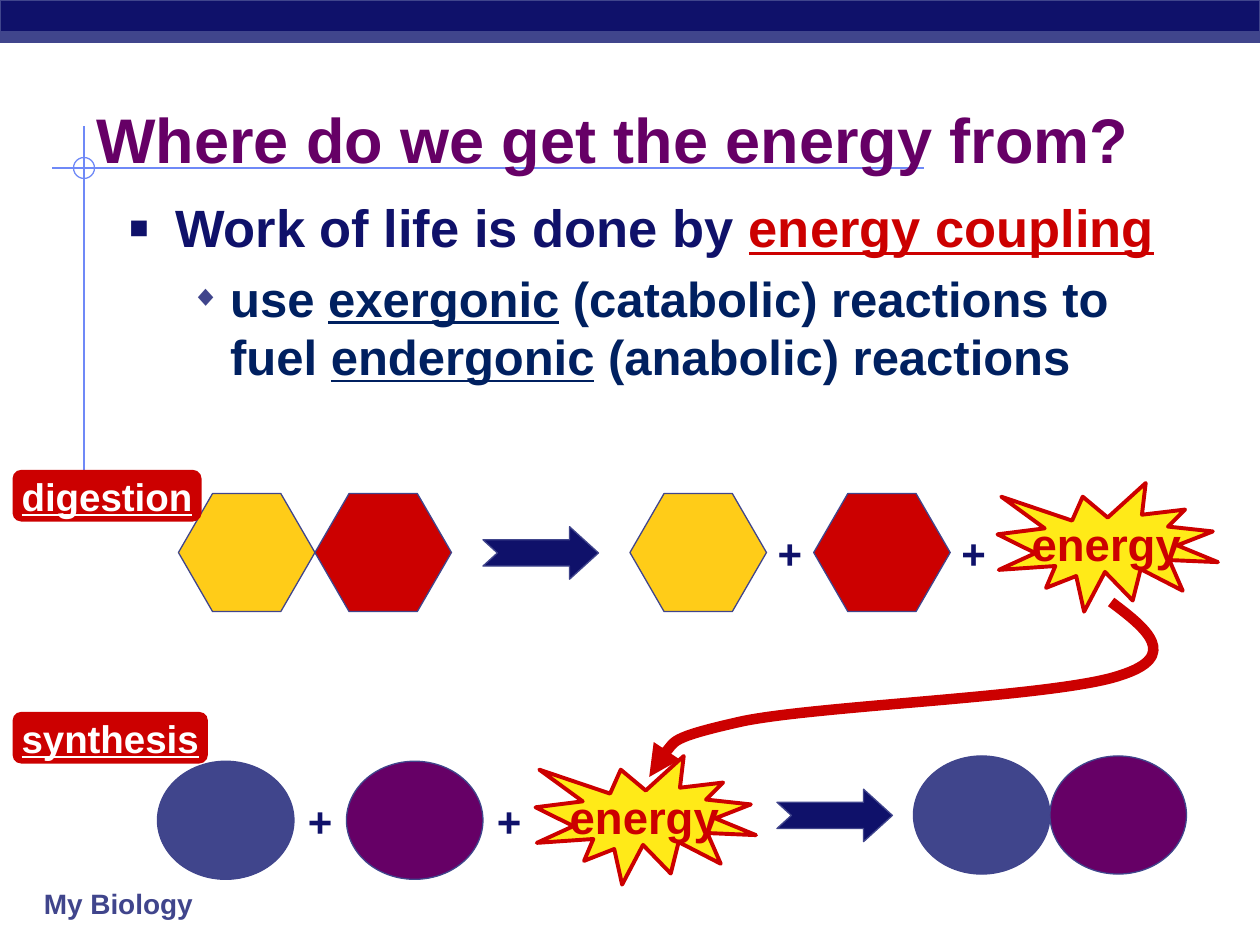
from lxml import etree
from pptx import Presentation
from pptx.dml.color import RGBColor
from pptx.enum.shapes import MSO_CONNECTOR, MSO_SHAPE
from pptx.enum.text import MSO_ANCHOR, PP_ALIGN
from pptx.oxml.ns import qn
from pptx.util import Pt

HEXAGON, OVAL, RECT = MSO_SHAPE.HEXAGON, MSO_SHAPE.OVAL, MSO_SHAPE.RECTANGLE
ARROW, BURST = MSO_SHAPE.NOTCHED_RIGHT_ARROW, MSO_SHAPE.EXPLOSION1
ROUNDED = MSO_SHAPE.ROUNDED_RECTANGLE
STRAIGHT = MSO_CONNECTOR.STRAIGHT
TOP, MIDDLE = MSO_ANCHOR.TOP, MSO_ANCHOR.MIDDLE
LEFT, CENTER = PP_ALIGN.LEFT, PP_ALIGN.CENTER

FONT = "Arial"
COLORS = {
    "navy": "0F116A", "slate": "40458C", "guide": "6F89F7", "purple": "660066",
    "red": "CC0000", "ink": "002060", "gold": "FFCC18", "yellow": "FFEA18",
    "white": "FFFFFF",
}
MOLECULE = (78, 67.5)
ARROW_SIZE = (66, 30)
BURST_SIZE = (126, 73.5)
PLUS_SIZE = (28.8, 36)


def color(name):
    return RGBColor.from_string(COLORS[name])


def style_font(font, size, name, underline=None):
    font.name, font.size, font.bold = FONT, Pt(size), True
    font.color.rgb = color(name)
    font.underline = underline


def add_figure(slide, kind, at, size, fill=None, line="slate", width=0.75, adjust=None):
    figure = slide.shapes.add_shape(kind, *map(Pt, at + size))
    figure.shadow.inherit = False
    if fill:
        figure.fill.solid()
        figure.fill.fore_color.rgb = color(fill)
    else:
        figure.fill.background()
    if line:
        figure.line.color.rgb = color(line)
        figure.line.width = Pt(width)
    else:
        figure.line.fill.background()
    if adjust:
        for index, value in enumerate(adjust):
            figure.adjustments[index] = value
    return figure


def write_line(figure, text, size, name, align=CENTER, underline=None):
    frame = figure.text_frame
    frame.word_wrap = False
    frame.vertical_anchor = MIDDLE
    paragraph = frame.paragraphs[0]
    paragraph.text = text
    paragraph.alignment = align
    style_font(paragraph.font, size, name, underline)
    return frame


def add_text(slide, text, at, size, points, name, align=CENTER):
    box = slide.shapes.add_textbox(*map(Pt, at + size))
    return write_line(box, text, points, name, align)


def add_guide(slide, start, end):
    guide = slide.shapes.add_connector(STRAIGHT, *map(Pt, start + end))
    guide.line.color.rgb = color("guide")
    guide.line.width = Pt(1)
    etree.SubElement(guide._element.spPr, qn("a:effectLst"))


def add_bullet(paragraph, runs, size, name, indent, hanging, mark, mark_color, percent):
    paragraph.space_before = Pt(size * 0.2)
    style_font(paragraph.font, size, name)
    for text, run_color, underline in runs:
        run = paragraph.add_run()
        run.text = text
        style_font(run.font, size, run_color, underline)
    props = paragraph._p.get_or_add_pPr()
    props.set("marL", str(Pt(indent)))
    props.set("indent", str(-Pt(hanging)))
    # Bullet elements follow the spacing and precede the default run properties
    bullet_color = etree.Element(qn("a:buClr"))
    etree.SubElement(bullet_color, qn("a:srgbClr"), val=COLORS[mark_color])
    bullet_size = etree.Element(qn("a:buSzPct"), val=str(percent * 1000))
    bullet_font = etree.Element(qn("a:buFont"), typeface=FONT)
    bullet_char = etree.Element(qn("a:buChar"), char=mark)
    defaults = props.find(qn("a:defRPr"))
    for element in (bullet_color, bullet_size, bullet_font, bullet_char):
        defaults.addprevious(element)


def add_molecules(slide, kind, top, molecules, adjust=None):
    for left, fill in molecules:
        add_figure(slide, kind, (left, top), MOLECULE, fill, adjust=adjust)


def add_pluses(slide, top, lefts):
    for left in lefts:
        add_text(slide, "+", (left, top), PLUS_SIZE, 24, "navy")


def add_reaction_arrow(slide, at):
    add_figure(slide, ARROW, at, ARROW_SIZE, "navy", adjust=(0.5, 0.55))


def add_energy(slide, at):
    burst = add_figure(slide, BURST, at, BURST_SIZE, "yellow", "red", 2.25)
    write_line(burst, "energy", 26, "red")


def add_label(slide, text, top, width):
    label = add_figure(slide, ROUNDED, (7.2, top), (width, 29.5), "red", None, adjust=(0.167,))
    frame = write_line(label, text, 22, "white", underline=True)
    frame.margin_left = frame.margin_right = Pt(3.6)
    frame.margin_top = frame.margin_bottom = 0


def add_energy_flow(slide, points):
    """Draw a curve from a start point and triples of Bezier points."""
    builder = slide.shapes.build_freeform(*points[0], scale=Pt(1))
    builder.add_line_segments(points[1:], close=False)
    flow = builder.convert_to_shape()
    flow.shadow.inherit = False
    flow.fill.background()
    flow.line.color.rgb = color("red")
    flow.line.width = Pt(6)
    etree.SubElement(flow.line._get_or_add_ln(), qn("a:tailEnd"), type="triangle")
    # Each three straight segments become one cubic curve
    segments = list(flow._element.iter(qn("a:lnTo")))
    for first in range(0, len(segments), 3):
        curve = etree.Element(qn("a:cubicBezTo"))
        segments[first].addprevious(curve)
        for segment in segments[first:first + 3]:
            curve.append(segment[0])
            segment.getparent().remove(segment)


def add_frame(slide):
    add_guide(slide, (30, 96), (528, 96))
    add_guide(slide, (48, 72), (48, 276))
    add_figure(slide, OVAL, (42, 90), (12, 12), line="guide")
    add_figure(slide, RECT, (0, 0), (720, 24), "navy")
    add_figure(slide, RECT, (0, 18), (720, 6), "slate")
    course = add_text(slide, "My Biology", (18, 503), (114, 26.5), 16, "slate", LEFT)
    course.paragraphs[0].space_before = Pt(8)


def add_statement(slide):
    title = add_text(slide, "Where do we get the energy from?", (48, 54), (612, 60),
                     36, "purple", LEFT)
    title.word_wrap, title.vertical_anchor = True, TOP
    body = slide.shapes.add_textbox(*map(Pt, (66, 108, 612, 132))).text_frame
    body.word_wrap = True
    add_bullet(body.paragraphs[0],
               [("Work of life is done by ", "navy", None), ("energy coupling", "red", True)],
               30, "navy", 27, 27, "▪", "navy", 120)
    add_bullet(body.add_paragraph(),
               [("use ", "ink", None), ("exergonic", "ink", True),
                (" (catabolic) reactions to fuel ", "ink", None),
                ("endergonic", "ink", True), (" (anabolic) reactions", "ink", None)],
               28, "ink", 58.5, 22.5, "◆", "slate", 60)


def main():
    prs = Presentation()
    prs.slide_width, prs.slide_height = Pt(720), Pt(540)
    slide = prs.slides.add_slide(prs.slide_layouts[6])
    add_frame(slide)
    add_statement(slide)

    # Digestion: a joined pair splits and releases energy
    add_molecules(slide, HEXAGON, 282,
                  [(102, "gold"), (180, "red"), (360, "gold"), (465, "red")], (0.289, 1.155))
    add_pluses(slide, 298, (437, 542))
    add_reaction_arrow(slide, (276, 301))
    add_energy(slide, (570, 276))

    # Synthesis: energy joins two separate molecules
    add_molecules(slide, OVAL, 435, [(90, "slate"), (198, "purple")])
    add_molecules(slide, OVAL, 432, [(522, "slate"), (600, "purple")])
    add_pluses(slide, 451, (168.5, 276.5))
    add_reaction_arrow(slide, (444, 451))
    add_energy(slide, (306, 432))

    # Energy passes from digestion to synthesis
    add_energy_flow(slide, [
        (635, 343.5), (655, 359), (675, 375), (639.5, 386.5),
        (605, 398), (470, 403), (425, 412.5), (380, 422), (376, 433), (371, 443.5)])
    add_label(slide, "digestion", 268.5, 108)
    add_label(slide, "synthesis", 406.8, 111.6)
    prs.save("out.pptx")


if __name__ == "__main__":
    main()
